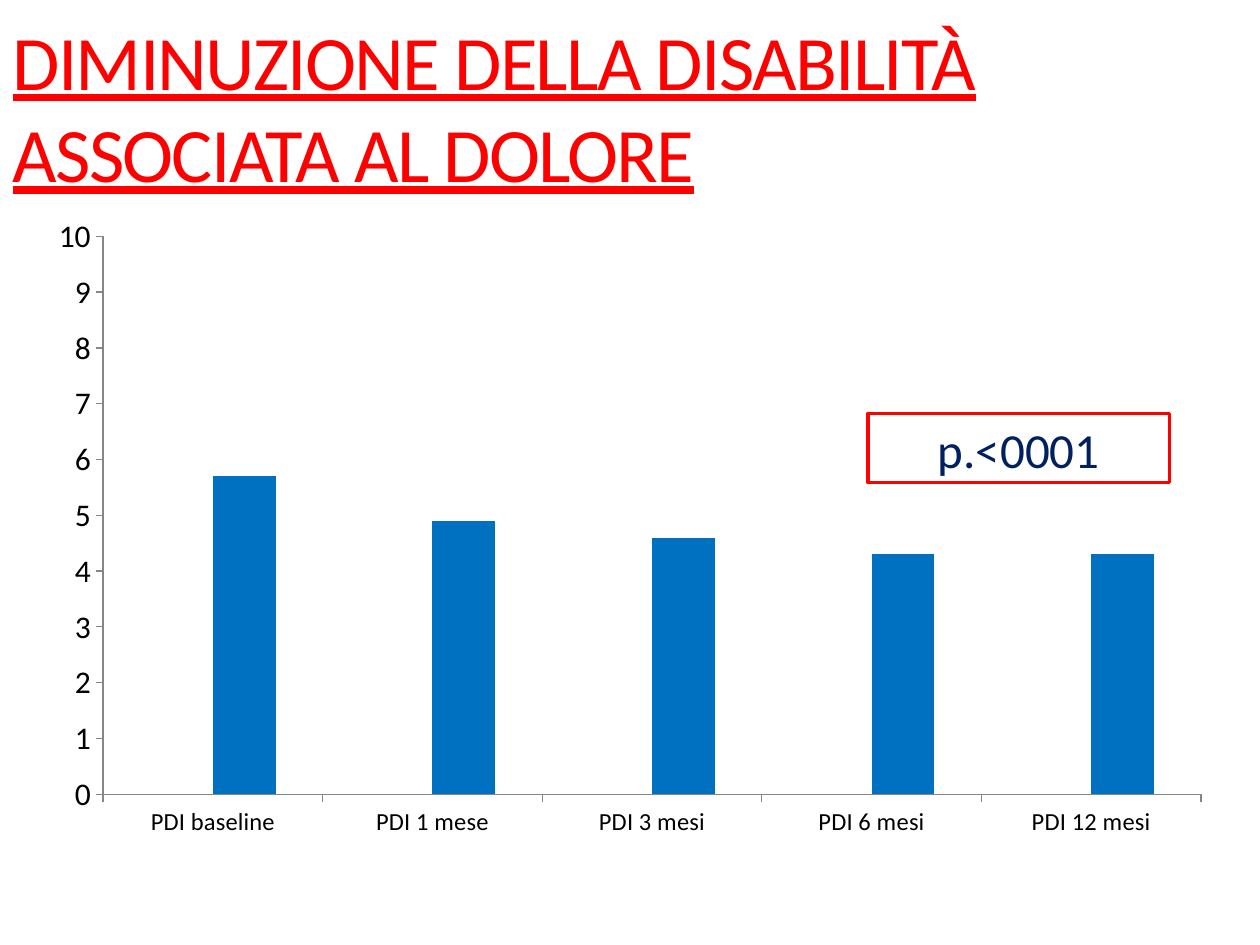
from lxml.etree import SubElement
from pptx import Presentation
from pptx.chart.data import CategoryChartData
from pptx.dml.color import RGBColor
from pptx.enum.chart import XL_CHART_TYPE as ChartType, XL_TICK_MARK as TickMark
from pptx.enum.shapes import MSO_SHAPE as Shape
from pptx.enum.text import MSO_ANCHOR as Anchor, MSO_AUTO_SIZE as AutoSize, PP_ALIGN as Align
from pptx.oxml.ns import qn
from pptx.util import Inches, Pt

WIDTH, HEIGHT = Inches(10), Inches(7.5)
FONT = "Calibri"
RED, BLUE, NAVY = "FF0000", "0070C0", "002060"
WHITE, BLACK, GREY = "FFFFFF", "000000", "868686"
PERIODS = ["PDI baseline", "PDI 1 mese", "PDI 3 mesi", "PDI 6 mesi", "PDI 12 mesi"]
SERIES = [
    ("Series 1", [None] * len(PERIODS), "4F81BD"),
    ("Series 2", [5.7, 4.9, 4.6, 4.3, 4.3], BLUE),
]


def color(value):
    return RGBColor.from_string(value)


def style_font(font, size, value):
    font.name = FONT
    font.size = Pt(size)
    font.color.rgb = color(value)


def add_title(slide, text):
    title = slide.shapes.title
    title.left, title.top = 0, Inches(0.37)
    title.width, title.height = WIDTH, Inches(1.25)
    frame = title.text_frame
    frame.auto_size = AutoSize.NONE
    frame.vertical_anchor = Anchor.BOTTOM
    para = frame.paragraphs[0]
    para.text = text
    para.alignment = Align.LEFT
    for span in para.runs:
        style_font(span.font, 44, RED)
        span.font.underline = True
        span.font._element.set("spc", "-100")


def style_axis(axis, size):
    axis.has_major_gridlines = False
    axis.major_tick_mark = TickMark.OUTSIDE
    axis.minor_tick_mark = TickMark.NONE
    axis.format.line.color.rgb = color(GREY)
    style_font(axis.tick_labels.font, size, BLACK)


def place_plot(chart, **shares):
    area = chart._chartSpace.chart.plotArea
    layout = area.find(qn("c:layout"))
    if layout is None:
        layout = SubElement(area, qn("c:layout"))
        area.insert(0, layout)
    manual = SubElement(layout, qn("c:manualLayout"))
    settings = {"layoutTarget": "inner", "xMode": "edge", "yMode": "edge", **shares}
    for name, value in settings.items():
        SubElement(manual, qn(f"c:{name}")).set("val", str(value))


def add_column_chart(slide):
    data = CategoryChartData()
    data.categories = PERIODS
    for name, values, _ in SERIES:
        data.add_series(name, values)
    chart = slide.shapes.add_chart(
        ChartType.COLUMN_CLUSTERED, Inches(0.28), Inches(1.62),
        Inches(9.45), Inches(5.12), data).chart
    chart.has_legend = False
    chart.has_title = False
    style_font(chart.font, 10, BLACK)
    plot = chart.plots[0]
    plot.gap_width = 150
    plot.vary_by_categories = False
    for series, (_, _, fill) in zip(plot.series, SERIES):
        series.format.fill.solid()
        series.format.fill.fore_color.rgb = color(fill)
    style_axis(chart.category_axis, 14)
    style_axis(chart.value_axis, 18)
    chart.value_axis.minimum_scale = 0
    chart.value_axis.maximum_scale = 10
    chart.value_axis.major_unit = 1
    place_plot(chart, x=0.057, y=0.05, w=0.922, h=0.865)


def add_label(slide, text):
    box = slide.shapes.add_shape(
        Shape.RECTANGLE, Inches(6.89), Inches(3.28), Inches(2.39), Inches(0.55))
    box.shadow.inherit = False
    box.fill.solid()
    box.fill.fore_color.rgb = color(WHITE)
    box.line.color.rgb = color(RED)
    box.line.width = Pt(2)
    frame = box.text_frame
    frame.word_wrap = True
    frame.vertical_anchor = Anchor.TOP
    para = frame.paragraphs[0]
    para.text = text
    para.alignment = Align.CENTER
    style_font(para.runs[0].font, 28, NAVY)


def main():
    deck = Presentation()
    deck.slide_width, deck.slide_height = WIDTH, HEIGHT
    page = deck.slides.add_slide(deck.slide_layouts[5])
    add_title(page, "DIMINUZIONE DELLA DISABILITÀ\vASSOCIATA AL DOLORE")
    add_column_chart(page)
    add_label(page, "p.<0001")
    deck.save("out.pptx")


if __name__ == "__main__":
    main()
